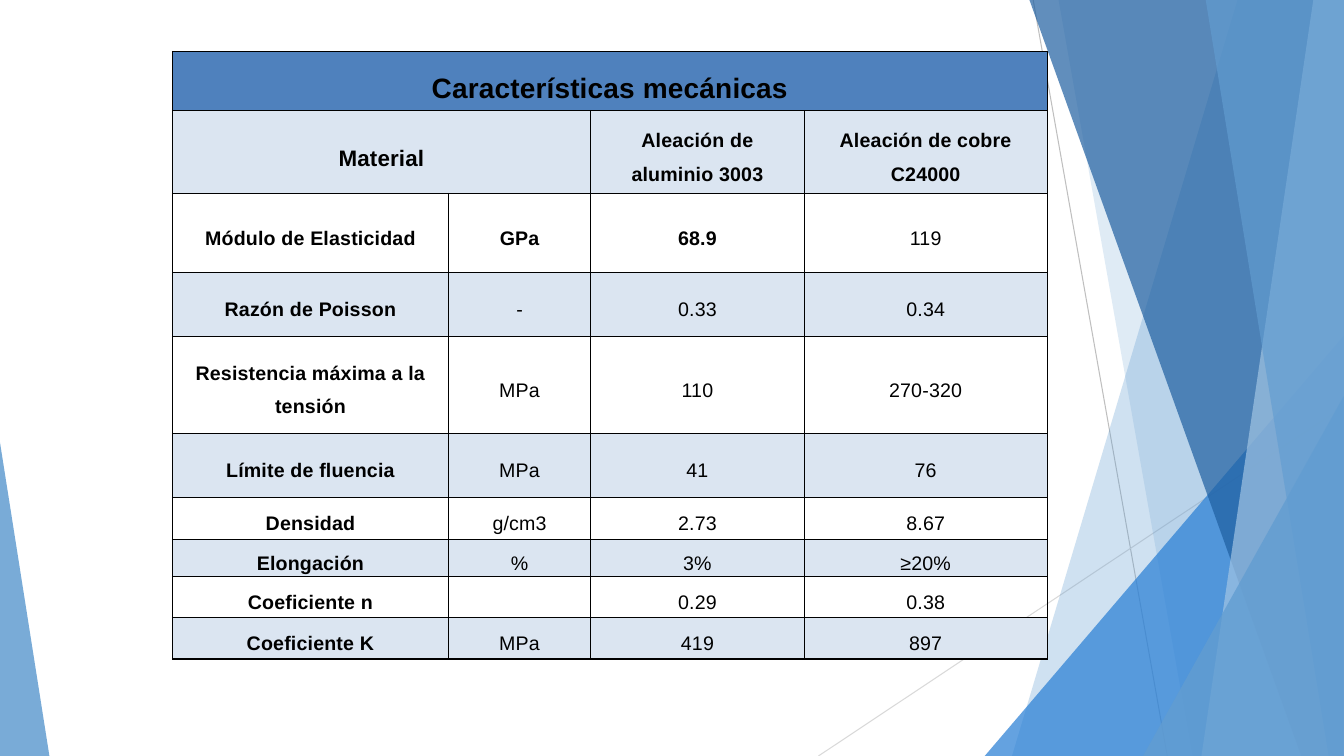
"""Build a slide with a table of mechanical properties over faceted shapes."""
from typing import NamedTuple, Union

from lxml import etree
from pptx import Presentation
from pptx.dml.color import RGBColor
from pptx.enum import shapes, text
from pptx.oxml.ns import qn
from pptx.util import Pt

WIDE, HIGH, TOP = 960, 540, -0.72
HUES = {
    "sky": "629DD1", "blue": "297FD5", "navy": "1F5FA0", "pale": "A1C4E3",
    "head": "4F81BD", "band": "DBE5F1", "ink": "000000",
    "gray": "BFBFBF", "light": "D9D9D9",
}


class Ray(NamedTuple):
    start: tuple[float, float]
    end: tuple[float, float]
    hue: str


class Facet(NamedTuple):
    top: float
    base: float
    hue: str
    alpha: int


class Wedge(NamedTuple):
    left: float
    top: float
    wide: float
    high: float
    apex: int
    hue: str
    alpha: int


RAYS = [
    Ray((738, 0), (833.8, HIGH), "gray"),
    Ray((WIDE, 290.2), (584.6, HIGH), "light"),
]
PANES = [
    Facet(884.2, 722.9, "sky", 30),
    Facet(756, 851.8, "sky", 20),
    Wedge(703.4, 239.8, 256.4, 300.2, 1, "blue", 72),
    Facet(735.1, 929.5, "navy", 70),
    Facet(938.2, 858.2, "pale", 70),
    Facet(861.1, 949, "sky", 65),
    Wedge(816.5, 283, 143.3, 257, 1, "sky", 80),
    Wedge(0, 316.1, 35.3, 223.9, 0, "sky", 85),
]
COLS = [197.3, 101.5, 152.6, 173.5]
TALL = [42.5, 59, 56.2, 46.1, 69.1, 46.1, 29.5, 26.6, 29.5, 29.5]
ROWS = [
    ("Características mecánicas", "", "", ""),
    ("Material", "", "Aleación de aluminio 3003", "Aleación de cobre C24000"),
    ("Módulo de Elasticidad", "GPa", "68.9", "119"),
    ("Razón de Poisson", "-", "0.33", "0.34"),
    ("Resistencia máxima a la tensión", "MPa", "110", "270-320"),
    ("Límite de fluencia", "MPa", "41", "76"),
    ("Densidad", "g/cm3", "2.73", "8.67"),
    ("Elongación", "%", "3%", "≥20%"),
    ("Coeficiente n", "", "0.29", "0.38"),
    ("Coeficiente K", "MPa", "419", "897"),
]


def tint(hue: str) -> RGBColor:
    return RGBColor.from_string(HUES[hue])


def draw_ray(slide, ray: Ray) -> None:
    ends = [Pt(n) for n in ray.start + ray.end]
    line = slide.shapes.add_connector(shapes.MSO_CONNECTOR.STRAIGHT, *ends)
    line.line.color.rgb = tint(ray.hue)
    line.line.width = Pt(0.75)
    etree.SubElement(line._element.spPr, qn("a:effectLst"))


def draw_pane(slide, pane: Union[Facet, Wedge]) -> None:
    if isinstance(pane, Facet):
        spots = [(WIDE, TOP), (WIDE, HIGH), (pane.base, HIGH)]
        pen = slide.shapes.build_freeform(Pt(pane.top), Pt(TOP))
        pen.add_line_segments([(Pt(x), Pt(y)) for x, y in spots], close=True)
        shape = pen.convert_to_shape()
    else:
        box = [Pt(n) for n in pane[:4]]
        shape = slide.shapes.add_shape(shapes.MSO_SHAPE.ISOSCELES_TRIANGLE, *box)
        shape.adjustments[0] = pane.apex
    shape.shadow.inherit = False
    shape.line.fill.background()
    shape.fill.solid()
    shape.fill.fore_color.rgb = tint(pane.hue)
    color = shape._element.spPr.find(".//" + qn("a:srgbClr"))
    etree.SubElement(color, qn("a:alpha"), val=str(pane.alpha * 1000))


def edge(cell) -> None:
    props = cell._tc.get_or_add_tcPr()
    for side in "LRTB":
        line = etree.SubElement(props, qn(f"a:ln{side}"), w=str(Pt(1)))
        fill = etree.SubElement(line, qn("a:solidFill"))
        etree.SubElement(fill, qn("a:srgbClr"), val=HUES["ink"])


def write(cell, words: str, size: int, bold: bool) -> None:
    cell.vertical_anchor = text.MSO_ANCHOR.MIDDLE
    cell.margin_left = cell.margin_right = Pt(5)
    cell.margin_top = cell.margin_bottom = 0
    if not words:
        return
    cell.text_frame.text = words
    para = cell.text_frame.paragraphs[0]
    para.alignment = text.PP_ALIGN.CENTER
    para.line_spacing = 1.5
    run = para.runs[0]
    run.font.name, run.font.size, run.font.bold = "Arial", Pt(size), bold
    run.font.color.rgb = tint("ink")
    run._r.get_or_add_rPr().set("spc", "10")


def draw_table(slide) -> None:
    box = [Pt(n) for n in (123.1, 36.7, sum(COLS), sum(TALL))]
    grid = slide.shapes.add_table(len(ROWS), len(COLS), *box).table
    grid.first_row = grid.horz_banding = False
    for col, wide in zip(grid.columns, COLS):
        col.width = Pt(wide)
    for row, high in zip(grid.rows, TALL):
        row.height = Pt(high)
    for r, row in enumerate(ROWS):
        for c, words in enumerate(row):
            cell = grid.cell(r, c)
            size = {(0, 0): 20, (1, 0): 16}.get((r, c), 14)
            write(cell, words, size, r < 2 or c == 0 or (r == 2 and c < 3))
            edge(cell)
            if r == 0 or r % 2:
                cell.fill.solid()
                cell.fill.fore_color.rgb = tint("band" if r else "head")
            else:
                cell.fill.background()
    grid.cell(0, 0).merge(grid.cell(0, 3))
    grid.cell(1, 0).merge(grid.cell(1, 1))


def main() -> None:
    deck = Presentation()
    deck.slide_width, deck.slide_height = Pt(WIDE), Pt(HIGH)
    slide = deck.slides.add_slide(deck.slide_layouts[6])
    for ray in RAYS:
        draw_ray(slide, ray)
    for pane in PANES:
        draw_pane(slide, pane)
    draw_table(slide)
    deck.save("out.pptx")


if __name__ == "__main__":
    main()
